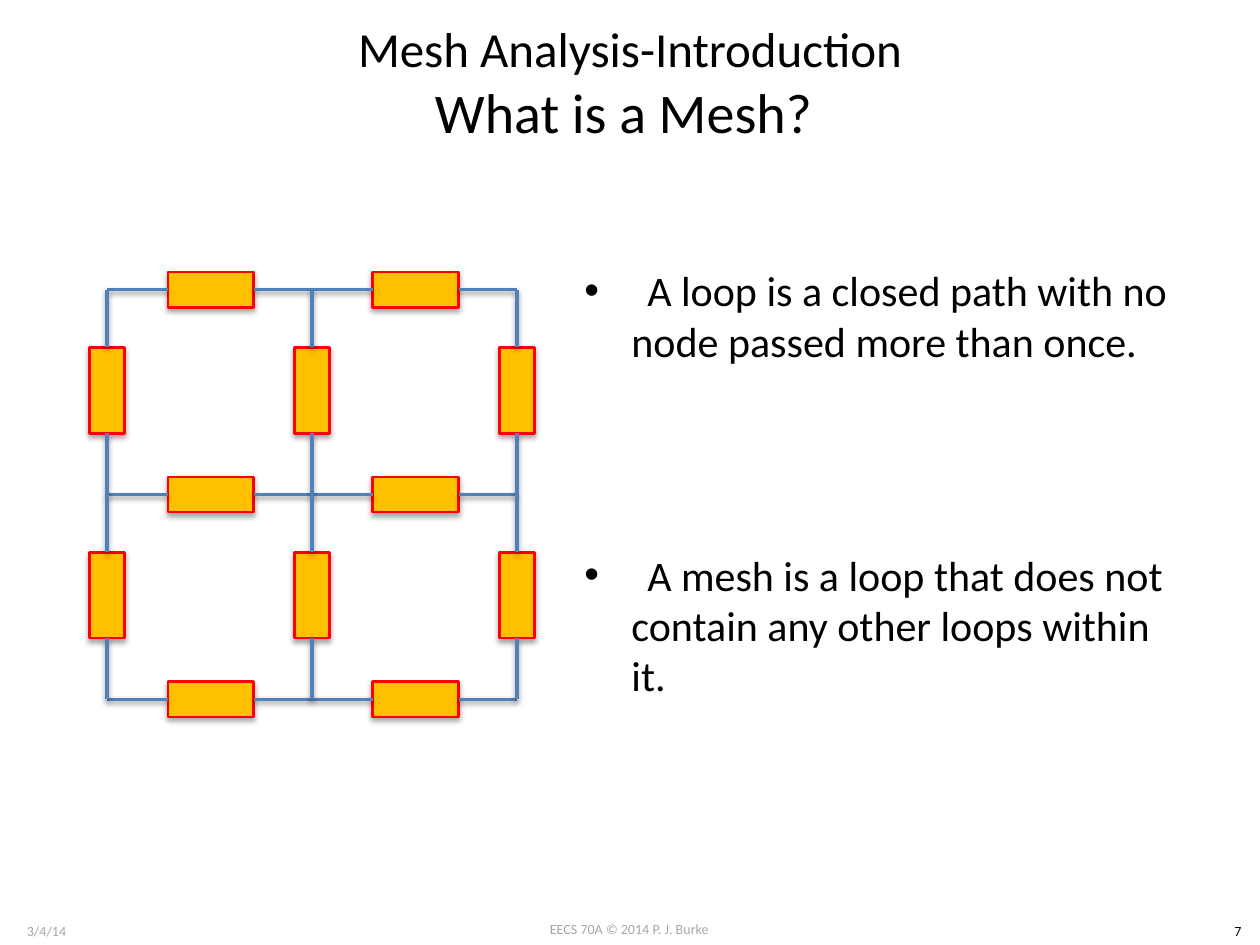
from dataclasses import dataclass
from lxml import etree
from pptx import Presentation
from pptx.dml.color import RGBColor as Rgb
from pptx.enum import shapes, text
from pptx.oxml import ns
from pptx.util import Cm, Pt


@dataclass
class Theme:
    font: str = "Calibri"
    ink: str = "000000"
    gray: str = "A6A6A6"
    gold: str = "FFC000"
    red: str = "FF0000"
    blue: str = "4F81BD"
    head: int = 28
    sub: int = 32
    body: int = 24
    foot: int = 8


theme = Theme()


def style(part, size, color):
    for run in part.runs:
        run.font.name = theme.font
        run.font.size = Pt(size)
        run.font.color.rgb = Rgb.from_string(color)


def shade(item, dist, alpha):
    box = etree.SubElement(item.element.spPr, ns.qn("a:effectLst"))
    drop = etree.SubElement(box, ns.qn("a:outerShdw"), blurRad="40000",
                            dist=str(dist), dir="5400000", rotWithShape="0")
    tone = etree.SubElement(drop, ns.qn("a:srgbClr"), val=theme.ink)
    etree.SubElement(tone, ns.qn("a:alpha"), val=str(alpha))


deck = Presentation()
deck.slide_width, deck.slide_height = Cm(25.4), Cm(19.05)
slide = deck.slides.add_slide(deck.slide_layouts[5])

title = slide.shapes.title
title.left, title.top, title.width, title.height = Cm(1.27), Cm(0.25), Cm(22.86), Cm(3.7)
frame = title.text_frame
frame.text = "Mesh Analysis-Introduction\vWhat is a Mesh? "
frame.vertical_anchor = text.MSO_ANCHOR.TOP
frame.auto_size = text.MSO_AUTO_SIZE.NONE
line = frame.paragraphs[0]
line.alignment = text.PP_ALIGN.CENTER
style(line, theme.head, theme.ink)
line.runs[1].font.size = Pt(theme.sub)

for words, left, top, width, color in (
    ("EECS 70A © 2014 P. J. Burke", 9.73, 18.44, 5.92, theme.gray),
    ("3/4/14", 0, 18.47, 1.88, theme.gray),
    ("7", 24.51, 18.47, 0.89, theme.ink),
):
    foot = slide.shapes.add_textbox(Cm(left), Cm(top), Cm(width), Cm(0.6))
    foot.text_frame.word_wrap = True
    foot.text_frame.text = words
    line = foot.text_frame.paragraphs[0]
    line.alignment = text.PP_ALIGN.CENTER
    style(line, theme.foot, color)

body = slide.shapes.add_textbox(Cm(11.53), Cm(5.21), Cm(12.6), Cm(11.84))
frame = body.text_frame
frame.word_wrap = True
frame.text = ("\tA loop is a closed path with no node passed more than once.\n"
              "\tA mesh is a loop that does not contain any other loops within it.")
for line, gap in zip(frame.paragraphs, (0, 105)):
    style(line, theme.body, theme.ink)
    line.space_before = Pt(gap)
    props = line._p.get_or_add_pPr()
    props.set("marL", str(Cm(0.95)))
    props.set("indent", str(-Cm(0.95)))
    props.set("defTabSz", str(Cm(1.27)))
    etree.SubElement(props, ns.qn("a:buFont"), typeface="Arial")
    etree.SubElement(props, ns.qn("a:buChar"), char="•")

mesh = slide.shapes.add_group_shape().shapes
left, top, pitch = Cm(2.16), Cm(5.84), Cm(4.13)
long, short = Cm(1.73), Cm(0.71)
across = [(col, row, True) for row in range(3) for col in range(2)]
down = [(col, row, False) for row in range(2) for col in range(3)]

for col, row, flat in across + down:
    x, y = left + col * pitch, top + row * pitch
    if flat:
        mid_x, mid_y, wide, high = x + Cm(2.09), y, long, short
        end_x, end_y, sites = x + pitch, y, (1, 3)
    else:
        mid_x, mid_y, wide, high = x, y + Cm(2.03), short, long
        end_x, end_y, sites = x, y + pitch, (0, 2)
    part = mesh.add_shape(shapes.MSO_SHAPE.RECTANGLE, mid_x - wide // 2,
                          mid_y - high // 2, wide, high)
    part.fill.solid()
    part.fill.fore_color.rgb = Rgb.from_string(theme.gold)
    part.line.color.rgb = Rgb.from_string(theme.red)
    part.line.width = Pt(1.5)
    shade(part, 23000, 35000)
    for node_x, node_y, site in ((x, y, sites[0]), (end_x, end_y, sites[1])):
        wire = mesh.add_connector(shapes.MSO_CONNECTOR.STRAIGHT,
                                  node_x, node_y, mid_x, mid_y)
        wire.end_connect(part, site)
        wire.line.color.rgb = Rgb.from_string(theme.blue)
        wire.line.width = Pt(2)
        shade(wire, 20000, 38000)

deck.save("out.pptx")
